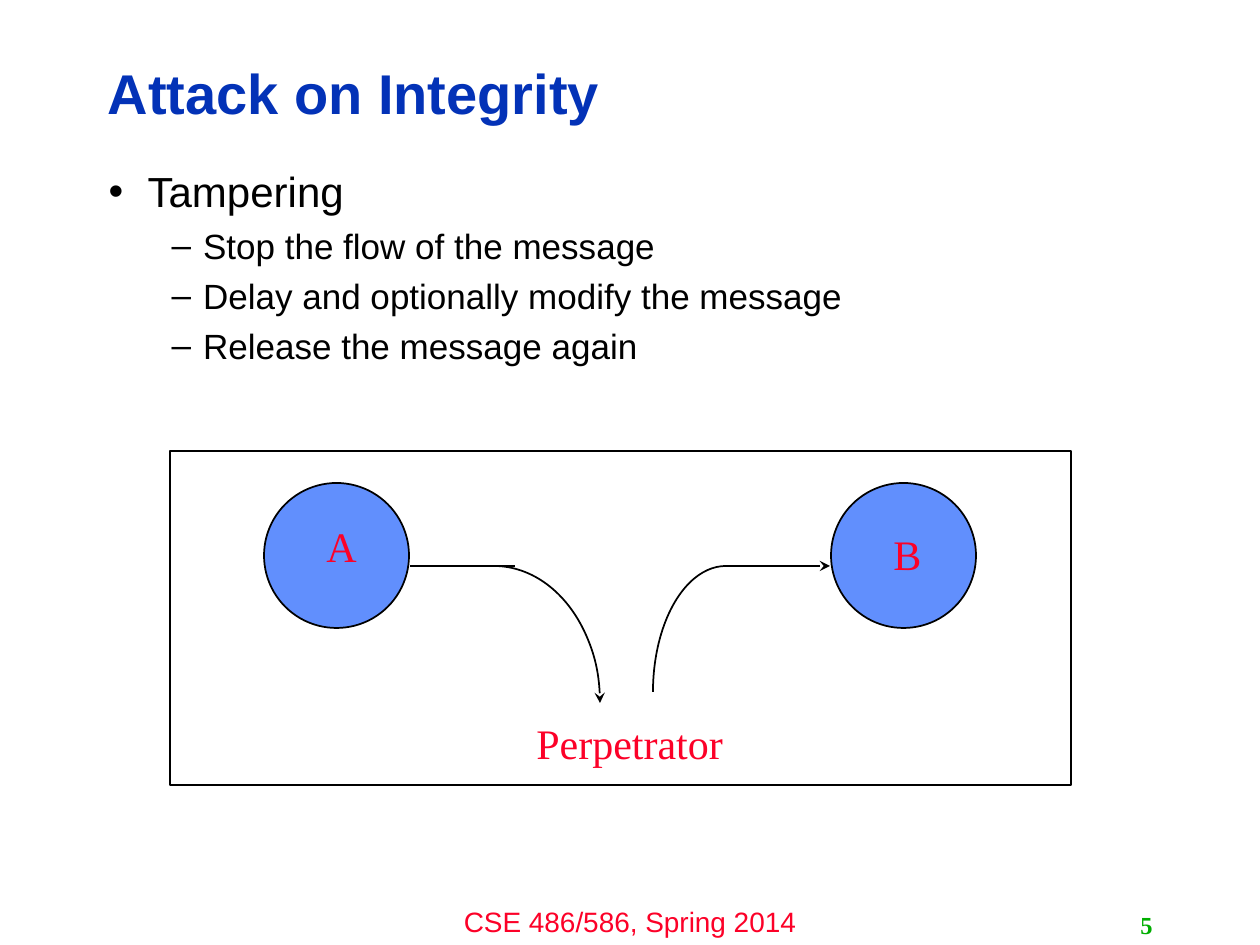
from dataclasses import dataclass
from typing import Optional

from lxml.etree import SubElement
from pptx import Presentation
from pptx.dml.color import RGBColor
from pptx.enum.shapes import MSO_CONNECTOR as Connector, MSO_SHAPE as Preset
from pptx.enum.text import MSO_ANCHOR as Anchor, MSO_AUTO_SIZE as AutoSize, PP_ALIGN as Align
from pptx.oxml.ns import qn
from pptx.util import Inches, Pt

EMU_PER_PX = Inches(1) / 126

BLACK = RGBColor(0x00, 0x00, 0x00)
WHITE = RGBColor(0xFF, 0xFF, 0xFF)
TITLE_BLUE = RGBColor(0x03, 0x32, 0xB7)
NODE_BLUE = RGBColor(0x61, 0x8F, 0xFD)
RED = RGBColor(0xFC, 0x01, 0x28)
GREEN = RGBColor(0x00, 0xAE, 0x00)
SANS, SERIF = "Arial", "Times New Roman"


@dataclass(frozen=True)
class Box:
    left: int
    top: int
    width: int
    height: int

    def emu(self) -> list[int]:
        return [px(n) for n in (self.left, self.top, self.width, self.height)]


@dataclass(frozen=True)
class Label:
    text: str
    box: Box
    font: str = SERIF
    size: int = 24
    color: RGBColor = RED
    bold: bool = False
    align: Align = Align.LEFT
    anchor: Anchor = Anchor.TOP
    wrap: bool = False
    before: int = 3


@dataclass(frozen=True)
class Bullet:
    text: str
    level: int
    size: int
    margin: float
    hanging: float
    before: int


@dataclass(frozen=True)
class Stroke:
    """A straight line, or a quarter ellipse when start_angle is given."""
    start: tuple[int, int]
    end: tuple[int, int]
    arrow: bool = False
    start_angle: Optional[int] = None


FOOTER = Label("CSE 486/586, Spring 2014", Box(420, 898, 420, 47), SANS, 16,
               align=Align.CENTER, wrap=True, before=2)
PAGE_NUMBER = Label("5", Box(903, 905, 262, 40), size=14, color=GREEN, bold=True,
                    align=Align.RIGHT, anchor=Anchor.MIDDLE, wrap=True, before=0)
TITLE_BOX = Box(95, 45, 1005, 102)
BODY_BOX = Box(96, 165, 1058, 679)
BULLETS = [Bullet("Tampering", 0, 24, 0.31, 0.31, 2)] + [
    Bullet(text, 1, 20, 0.75, 0.25, 7)
    for text in ("Stop the flow of the message",
                 "Delay and optionally modify the message",
                 "Release the message again")
]
PANEL = Box(170, 451, 901, 334)
NODES = [Box(left, 483, 145, 145) for left in (264, 831)]
LABELS = [
    Label("A", Box(314, 514, 55, 63)),
    Label("B", Box(881, 522, 53, 63)),
    Label("Perpetrator", Box(524, 711, 212, 63)),
]
STROKES = [
    Stroke((410, 566), (515, 566)),
    Stroke((494, 566), (600, 703), arrow=True, start_angle=270),
    Stroke((653, 692), (726, 566), start_angle=180),
    Stroke((726, 566), (830, 566), arrow=True),
]


def px(length: int) -> int:
    return round(length * EMU_PER_PX)


def place(shape, box: Box) -> None:
    shape.left, shape.top, shape.width, shape.height = box.emu()


def set_font(paragraph, name: str, size: int, color: RGBColor, bold: bool = False) -> None:
    font = paragraph.font
    font.name, font.size, font.bold = name, Pt(size), bold
    font.color.rgb = color


def draw_label(shapes, label: Label) -> None:
    frame = shapes.add_textbox(*label.box.emu()).text_frame
    frame.word_wrap = label.wrap
    frame.vertical_anchor = label.anchor
    paragraph = frame.paragraphs[0]
    paragraph.text = label.text
    paragraph.alignment = label.align
    paragraph.space_before = Pt(label.before)
    set_font(paragraph, label.font, label.size, label.color, label.bold)


def draw_shape(shapes, preset: Preset, box: Box, fill: RGBColor) -> None:
    shape = shapes.add_shape(preset, *box.emu())
    shape.shadow.inherit = False
    shape.fill.solid()
    shape.fill.fore_color.rgb = fill
    shape.line.color.rgb = BLACK
    shape.line.width = Pt(1)


def quarter_ellipse(shapes, stroke: Stroke):
    (x1, y1), (x2, y2) = stroke.start, stroke.end
    builder = shapes.build_freeform(x1, y1, scale=EMU_PER_PX)
    builder.add_line_segments([stroke.end], close=False)
    shape = builder.convert_to_shape()
    shape.fill.background()
    shape.shadow.inherit = False
    # Bend the only segment into a 90 degree arc
    segment = next(shape._element.iter(qn("a:lnTo")))
    outline = segment.getparent()
    outline.remove(segment)
    SubElement(outline, qn("a:arcTo"), wR=str(abs(x2 - x1)), hR=str(abs(y2 - y1)),
               stAng=str(stroke.start_angle * 60000), swAng=str(90 * 60000))
    return shape


def straight_line(shapes, stroke: Stroke):
    ends = [px(n) for n in stroke.start + stroke.end]
    line = shapes.add_connector(Connector.STRAIGHT, *ends)
    SubElement(line._element.spPr, qn("a:effectLst"))
    return line


def draw_stroke(shapes, stroke: Stroke) -> None:
    build = straight_line if stroke.start_angle is None else quarter_ellipse
    line = build(shapes, stroke).line
    line.color.rgb = BLACK
    line.width = Pt(1)
    if stroke.arrow:
        SubElement(line._get_or_add_ln(), qn("a:tailEnd"), type="stealth")


def fill_title(title) -> None:
    place(title, TITLE_BOX)
    frame = title.text_frame
    frame.text = "Attack on Integrity"
    frame.auto_size = AutoSize.NONE
    frame.vertical_anchor = Anchor.MIDDLE
    paragraph = frame.paragraphs[0]
    paragraph.alignment = Align.LEFT
    paragraph.line_spacing = 0.9
    set_font(paragraph, SANS, 32, TITLE_BLUE, bold=True)


def fill_body(body) -> None:
    place(body, BODY_BOX)
    frame = body.text_frame
    frame.text = "\n".join(bullet.text for bullet in BULLETS)
    frame.auto_size = AutoSize.NONE
    for paragraph, bullet in zip(frame.paragraphs, BULLETS):
        paragraph.level = bullet.level
        paragraph.line_spacing = 0.9
        paragraph.space_before = Pt(bullet.before)
        set_font(paragraph, SANS, bullet.size, BLACK)
        properties = paragraph._p.get_or_add_pPr()
        properties.set("marL", str(Inches(bullet.margin)))
        properties.set("indent", str(-Inches(bullet.hanging)))


def main() -> None:
    presentation = Presentation()
    presentation.slide_width, presentation.slide_height = Inches(10), Inches(7.5)
    slide = presentation.slides.add_slide(presentation.slide_layouts[1])

    # Text and footer
    draw_label(slide.shapes, FOOTER)
    fill_title(slide.shapes.title)
    fill_body(slide.placeholders[1])
    draw_label(slide.shapes, PAGE_NUMBER)

    # Diagram: the message is diverted from A to B by way of the perpetrator
    diagram = slide.shapes.add_group_shape().shapes
    draw_shape(diagram, Preset.RECTANGLE, PANEL, WHITE)
    for node in NODES:
        draw_shape(diagram, Preset.OVAL, node, NODE_BLUE)
    for stroke in STROKES:
        draw_stroke(diagram, stroke)
    for label in LABELS:
        draw_label(diagram, label)

    presentation.save("out.pptx")


if __name__ == "__main__":
    main()
